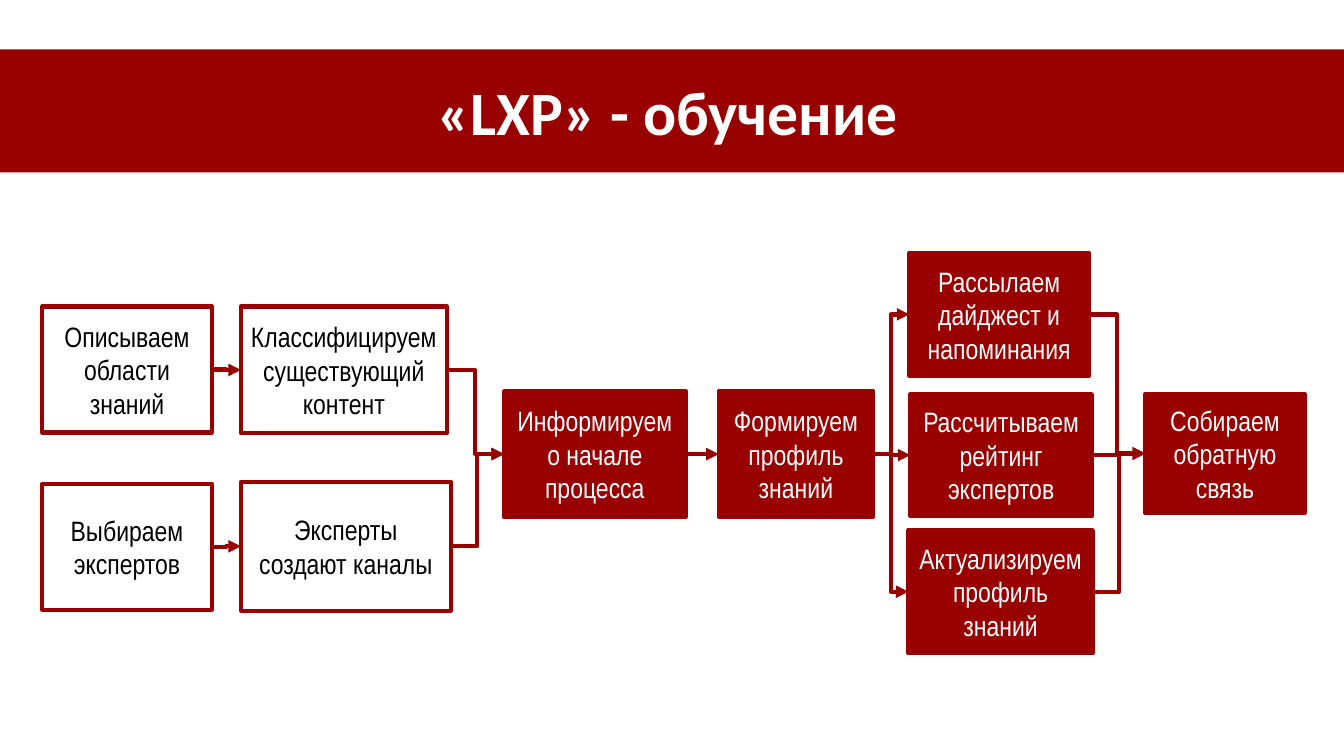
from dataclasses import dataclass

from lxml import etree
from pptx import Presentation
from pptx.dml.color import RGBColor
from pptx.enum.shapes import MSO_CONNECTOR, MSO_SHAPE
from pptx.enum.text import MSO_ANCHOR, PP_ALIGN
from pptx.oxml.ns import qn
from pptx.util import Inches, Pt

RECTANGLE = MSO_SHAPE.RECTANGLE
ELBOW = MSO_CONNECTOR.ELBOW
MIDDLE = MSO_ANCHOR.MIDDLE
LEFT, CENTER = PP_ALIGN.LEFT, PP_ALIGN.CENTER
LEFT_SIDE, RIGHT_SIDE = 1, 3


@dataclass(frozen=True)
class Theme:
    red: RGBColor = RGBColor(0x99, 0x00, 0x00)
    white: RGBColor = RGBColor(0xFF, 0xFF, 0xFF)
    black: RGBColor = RGBColor(0x00, 0x00, 0x00)
    title_font: str = "Calibri"
    step_font: str = "Arial Narrow"
    title_size: Pt = Pt(44)
    step_size: Pt = Pt(20)
    line_width: Pt = Pt(3)


theme = Theme()


def write_text(shape, text, *, font, size, color, bold=False,
               align=CENTER, spacing=1.0, inset=0.08):
    frame = shape.text_frame
    frame.word_wrap = True
    frame.vertical_anchor = MIDDLE
    frame.margin_left = frame.margin_right = Inches(inset)
    para = frame.paragraphs[0]
    para.alignment = align
    para.line_spacing = spacing
    span = para.add_run()
    span.text = text
    span.font.name = font
    span.font.size = size
    span.font.bold = bold
    span.font.color.rgb = color


def add_rectangle(page, left, top, width, height, fill):
    shape = page.shapes.add_shape(
        RECTANGLE, Inches(left), Inches(top), Inches(width), Inches(height))
    shape.shadow.inherit = False
    shape.fill.solid()
    shape.fill.fore_color.rgb = fill
    return shape


deck = Presentation()
deck.slide_width = Inches(13.33)
deck.slide_height = Inches(7.5)
page = deck.slides.add_slide(deck.slide_layouts[6])

# Title band
band = add_rectangle(page, 0, 0.49, 13.33, 1.22, theme.red)
band.line.fill.background()
title = page.shapes.add_textbox(Inches(4.24), Inches(0.42), Inches(5.13), Inches(1.45))
write_text(title, "«LXP» - обучение", font=theme.title_font, size=theme.title_size,
           color=theme.white, bold=True, align=LEFT, spacing=0.9, inset=0.1)

# Process steps: name, text, left, top, width, height, filled
steps = [
    ("areas", "Описываем области знаний", 0.42, 3.04, 1.68, 1.25, False),
    ("content", "Классифицируем существующий контент", 2.39, 3.04, 2.04, 1.26, False),
    ("experts", "Выбираем экспертов", 0.42, 4.8, 1.68, 1.25, False),
    ("channels", "Эксперты создают каналы", 2.39, 4.78, 2.08, 1.28, False),
    ("start", "Информируем о начале процесса", 5, 3.88, 1.8, 1.25, True),
    ("profile", "Формируем профиль знаний", 7.13, 3.88, 1.53, 1.25, True),
    ("digest", "Рассылаем дайджест и напоминания", 9.02, 2.51, 1.78, 1.22, True),
    ("rating", "Рассчитываем рейтинг экспертов", 9.03, 3.91, 1.8, 1.21, True),
    ("update", "Актуализируем профиль знаний", 9.01, 5.26, 1.83, 1.22, True),
    ("feedback", "Собираем обратную связь", 11.36, 3.91, 1.58, 1.18, True),
]
boxes = {}
for name, text, left, top, width, height, filled in steps:
    box = add_rectangle(page, left, top, width, height,
                        theme.red if filled else theme.white)
    box.line.color.rgb = theme.red
    box.line.width = theme.line_width
    write_text(box, text, font=theme.step_font, size=theme.step_size,
               color=theme.white if filled else theme.black)
    boxes[name] = box

# Arrows from the right side of one step to the left side of the next
flows = [
    ("areas", "content"), ("experts", "channels"),
    ("content", "start"), ("channels", "start"), ("start", "profile"),
    ("profile", "digest"), ("profile", "rating"), ("profile", "update"),
    ("digest", "feedback"), ("rating", "feedback"), ("update", "feedback"),
]
for source, target in flows:
    arrow = page.shapes.add_connector(ELBOW, 0, 0, 0, 0)
    arrow.begin_connect(boxes[source], RIGHT_SIDE)
    arrow.end_connect(boxes[target], LEFT_SIDE)
    arrow.line.color.rgb = theme.red
    arrow.line.width = theme.line_width
    etree.SubElement(arrow.line._get_or_add_ln(), qn("a:tailEnd"), type="triangle")
    etree.SubElement(arrow._element.spPr, qn("a:effectLst"))

deck.save("out.pptx")
